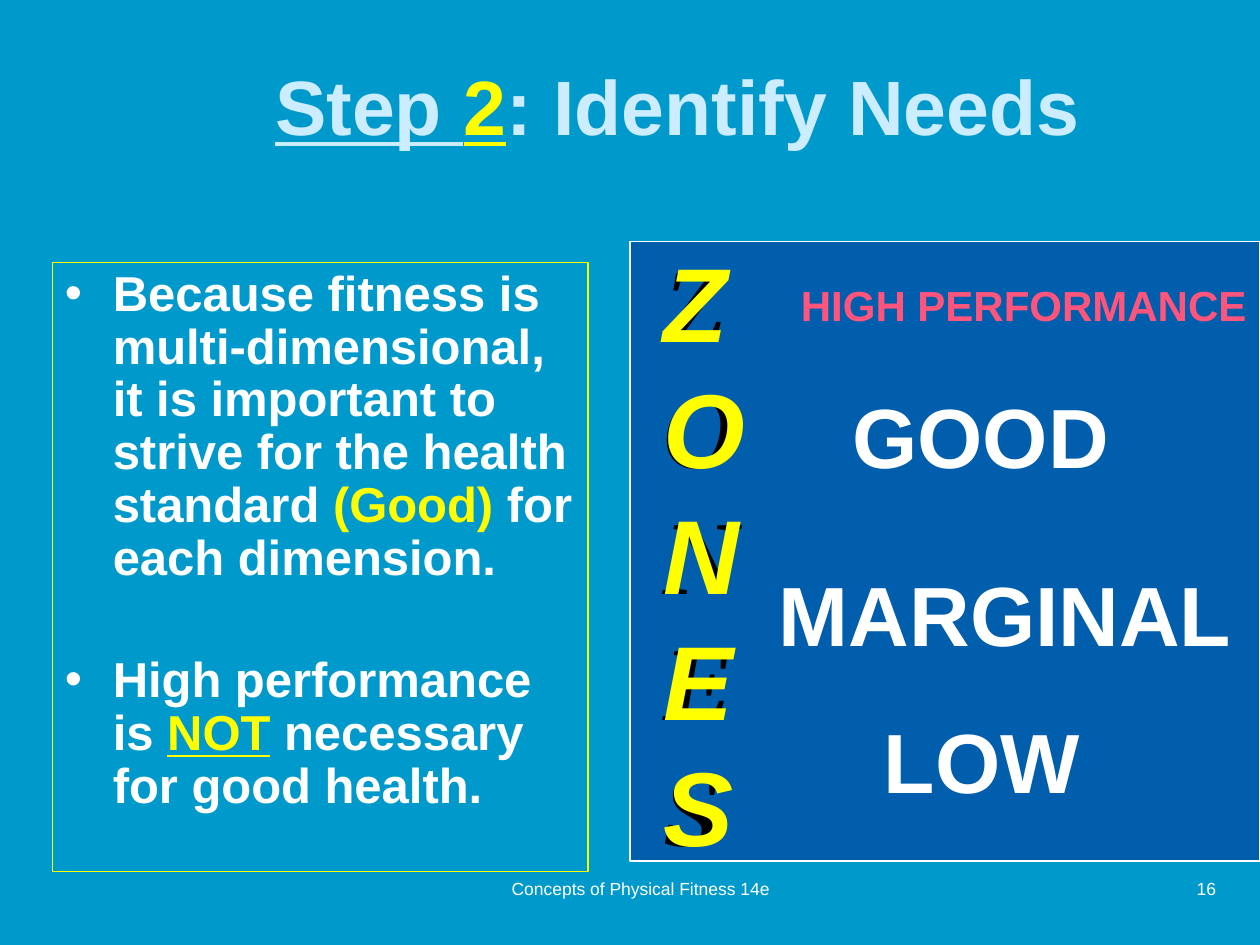
from dataclasses import dataclass

from lxml.etree import SubElement
from pptx import Presentation
from pptx.dml.color import RGBColor
from pptx.enum.shapes import MSO_SHAPE as SHAPE
from pptx.enum.text import MSO_ANCHOR as ANCHOR, MSO_AUTO_SIZE as FIT, PP_ALIGN as ALIGN
from pptx.oxml.ns import qn
from pptx.util import Inches, Pt


@dataclass(frozen=True)
class Theme:
    back: str = "0099CC"
    panel: str = "005EAC"
    white: str = "FFFFFF"
    pale: str = "CCECFF"
    yellow: str = "FFFF00"
    border: str = "FAFD00"
    pink: str = "FF557C"
    black: str = "000000"
    sans: str = "Arial"
    serif: str = "Times New Roman"
    title: int = 44
    body: int = 28
    letter: int = 60
    zone: int = 48
    label: int = 24
    small: int = 10


T = Theme()
COLS, ROWS = 120, 90

TITLE = [("Step ", dict(underline=True)),
         ("2", dict(color=T.yellow, underline=True)),
         (": Identify Needs", {})]
BULLETS = [
    [("Because fitness is multi-dimensional, it is important to strive for the health standard ", {}),
     ("(Good)", dict(color=T.yellow)),
     (" for each dimension.", {})],
    [("High performance is ", {}),
     ("NOT", dict(color=T.yellow, underline=True)),
     (" necessary for good health.", {})],
]
LETTERS = "ZONES"
LETTER_LAYERS = [
    (T.serif, T.black, (8.5, 9.6, 9.6, 9, 7.9)),
    (T.sans, T.yellow, (8.5, 10.2, 9.6, 9, 9)),
]
ZONES = [
    ("HIGH PERFORMANCE", (75.1, 26, 44.9, 6), T.label, T.pink),
    ("GOOD", (80, 36, 26.9, 10.8), T.zone, T.white),
    ("MARGINAL", (73, 53, 45.5, 10.8), T.zone, T.white),
    ("LOW", (83, 67, 22, 10.8), T.zone, T.white),
]
FOOTERS = [
    ("Concepts of Physical Fitness 14e", (42, 83, 38, 5), ALIGN.CENTER),
    ("16", (92, 83, 25, 5), ALIGN.RIGHT),
]

prs = Presentation()
prs.slide_width, prs.slide_height = Inches(10), Inches(7.5)
s = prs.slides.add_slide(prs.slide_layouts[5])


def rgb(value):
    return RGBColor.from_string(value)


def grid(x, y, w, h):
    cw, rh = prs.slide_width / COLS, prs.slide_height / ROWS
    return [round(v) for v in (x * cw, y * rh, w * cw, h * rh)]


def add_runs(p, runs, **base):
    for text, changes in runs:
        r = p.add_run()
        r.text = text
        fmt = dict(name=T.sans, bold=True) | base | changes
        r.font.color.rgb = rgb(fmt.pop("color"))
        fmt["size"] = Pt(fmt["size"])
        for key, value in fmt.items():
            setattr(r.font, key, value)


def add_text(text, cell, wrap=False, align=ALIGN.LEFT, **fmt):
    tf = s.shapes.add_textbox(*grid(*cell)).text_frame
    tf.word_wrap = wrap
    tf.auto_size = FIT.NONE if wrap else FIT.SHAPE_TO_FIT_TEXT
    tf.paragraphs[0].alignment = align
    add_runs(tf.paragraphs[0], [(text, {})], **fmt)


def add_box(cell, line, width, fill=None):
    sp = s.shapes.add_shape(SHAPE.RECTANGLE, *grid(*cell))
    sp.shadow.inherit = False
    sp.line.color.rgb, sp.line.width = rgb(line), Pt(width)
    if fill:
        sp.fill.solid()
        sp.fill.fore_color.rgb = rgb(fill)
    else:
        sp.fill.background()
    return sp


def add_bullets(tf, items):
    tf.word_wrap, tf.vertical_anchor = True, ANCHOR.TOP
    for i, runs in enumerate(items):
        p = tf.add_paragraph() if i else tf.paragraphs[0]
        pPr = p._p.get_or_add_pPr()
        pPr.set("marL", str(Inches(0.38)))
        pPr.set("indent", str(-Inches(0.38)))
        SubElement(pPr, qn("a:buFont"), typeface=T.sans)
        SubElement(pPr, qn("a:buChar"), char="•")
        p.alignment, p.line_spacing = ALIGN.LEFT, 0.9
        p.space_before = Pt(39.5 if i else 0)
        add_runs(p, runs, size=T.body, color=T.white)


s.background.fill.solid()
s.background.fill.fore_color.rgb = rgb(T.back)

title = s.shapes.title
title.left, title.top, title.width, title.height = grid(25, 4, 86, 12)
tf = title.text_frame
tf.word_wrap, tf.auto_size, tf.vertical_anchor = True, FIT.NONE, ANCHOR.MIDDLE
tf.paragraphs[0].alignment = ALIGN.LEFT
add_runs(tf.paragraphs[0], TITLE, size=T.title, color=T.pale)

for text, cell, align in FOOTERS:
    add_text(text, cell, wrap=True, align=align, size=T.small, color=T.white, bold=False)

add_box((60, 23, 60, 59), T.white, 1, T.panel)
for font, color, widths in LETTER_LAYERS:
    for i, (letter, width) in enumerate(zip(LETTERS, widths)):
        add_text(letter, (62, 22 + 12 * i, width, 13.2),
                 name=font, size=T.letter, color=color, italic=True)
for text, cell, size, color in ZONES:
    add_text(text, cell, size=size, color=color)

add_bullets(add_box((5, 25, 51, 58), T.border, 0.75).text_frame, BULLETS)

prs.save("out.pptx")
